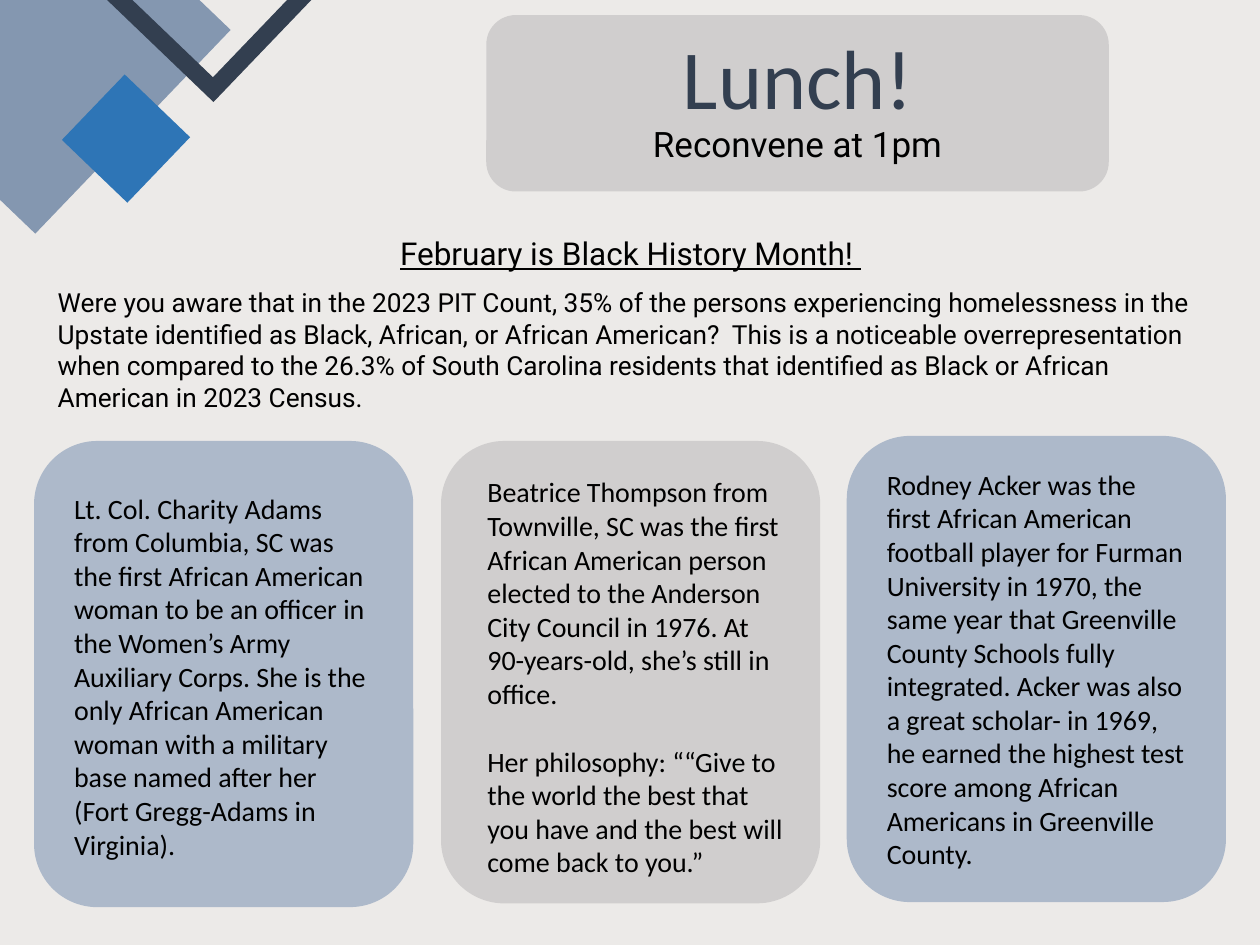
from lxml import etree
from pptx import Presentation
from pptx.dml.color import RGBColor
from pptx.enum.shapes import MSO_SHAPE
from pptx.enum.text import PP_ALIGN
from pptx.oxml.ns import qn
from pptx.util import Inches, Pt

RECT, ROUNDED = MSO_SHAPE.RECTANGLE, MSO_SHAPE.ROUNDED_RECTANGLE
LEFT, CENTER = PP_ALIGN.LEFT, PP_ALIGN.CENTER

THEME = {
    "background": "ECEAE8", "gray": "D0CECE", "pale_blue": "ADB9CA",
    "slate": "8497B0", "navy": "333F50", "blue": "2E75B6", "black": "000000",
    "heading_font": "Calibri", "body_font": "Roboto",
    "title": 48, "subtitle": 20, "heading": 18, "card": 16, "intro": 15,
}


def color(name):
    return RGBColor.from_string(THEME[name])


def add_panel(kind, box, fill=None, outline=None, rotation=0):
    panel = slide.shapes.add_shape(kind, *map(Inches, box))
    panel.shadow.inherit = False
    panel.rotation = rotation
    if fill:
        panel.fill.solid()
        panel.fill.fore_color.rgb = color(fill)
    else:
        panel.fill.background()
    if outline:
        panel.line.color.rgb = color(outline)
        panel.line.width = Pt(10)
        etree.SubElement(panel.element.spPr.find(qn("a:ln")), qn("a:miter"), lim="800000")
    else:
        panel.line.fill.background()


def add_text(box, paragraphs, font, ink="black"):
    frame = slide.shapes.add_textbox(*map(Inches, box)).text_frame
    frame.word_wrap = True
    for index, (text, size, align, gap, underline) in enumerate(paragraphs):
        paragraph = frame.add_paragraph() if index else frame.paragraphs[0]
        paragraph.alignment = align
        if gap:
            paragraph.space_before = Pt(gap)
        run = paragraph.add_run()
        run.text = text
        run.font.color.rgb = color(ink)
        formats = {"name": THEME[font], "size": Pt(THEME[size]), "underline": underline}
        for attribute, value in formats.items():
            setattr(run.font, attribute, value)


deck = Presentation()
deck.slide_width, deck.slide_height = Inches(10), Inches(7.5)
slide = deck.slides.add_slide(deck.slide_layouts[6])
slide.background.fill.solid()
slide.background.fill.fore_color.rgb = color("background")

add_panel(ROUNDED, (3.86, 0.12, 4.94, 1.4), "gray")

corner_diamonds = [
    ((-0.95, -0.88, 2.33, 2.24), "slate", None),
    ((1.04, -0.8, 1.26, 1.25), None, "navy"),
    ((0.64, 0.74, 0.72, 0.72), "blue", None),
]
for box, fill, outline in corner_diamonds:
    add_panel(RECT, box, fill, outline, rotation=43.8)

add_text((3.16, 0.15, 6.35, 0.91), [("Lunch!", "title", CENTER, 0, False)], "heading_font", "navy")
add_text((4.25, 0.92, 4.16, 0.44), [("Reconvene at 1pm", "subtitle", CENTER, 0, False)], "body_font")
add_text((0.36, 1.81, 9.29, 1.55), [
    ("February is Black History Month! ", "heading", CENTER, 0, True),
    ("Were you aware that in the 2023 PIT Count, 35% of the persons experiencing "
     "homelessness in the Upstate identified as Black, African, or African American?  "
     "This is a noticeable overrepresentation when compared to the 26.3% of South "
     "Carolina residents that identified as Black or African American in 2023 Census.",
     "intro", LEFT, 8.2, False),
], "body_font")

profiles = [
    ((0.27, 3.5, 3.01, 3.7), "pale_blue", (0.49, 3.85, 2.56, 3.06), [
        "Lt. Col. Charity Adams from Columbia, SC was the first African American woman "
        "to be an officer in the Women’s Army Auxiliary Corps. She is the only African "
        "American woman with a military base named after her (Fort Gregg-Adams in Virginia).",
    ]),
    ((3.5, 3.5, 3.01, 3.67), "gray", (3.77, 3.72, 2.56, 3.33), [
        "Beatrice Thompson from Townville, SC was the first African American person "
        "elected to the Anderson City Council in 1976. At 90-years-old, she’s still in office.",
        "Her philosophy: ““Give to the world the best that you have and the best will "
        "come back to you.”",
    ]),
    ((6.72, 3.46, 3.01, 3.7), "pale_blue", (6.94, 3.66, 2.56, 3.33), [
        "Rodney Acker was the first African American football player for Furman University "
        "in 1970, the same year that Greenville County Schools fully integrated. Acker was "
        "also a great scholar- in 1969, he earned the highest test score among African "
        "Americans in Greenville County.",
    ]),
]
for card_box, fill, story_box, story in profiles:
    add_panel(ROUNDED, card_box, fill)
    add_text(story_box, [(text, "card", LEFT, 19.5 if index else 0, False)
                         for index, text in enumerate(story)], "heading_font")

deck.save("out.pptx")
